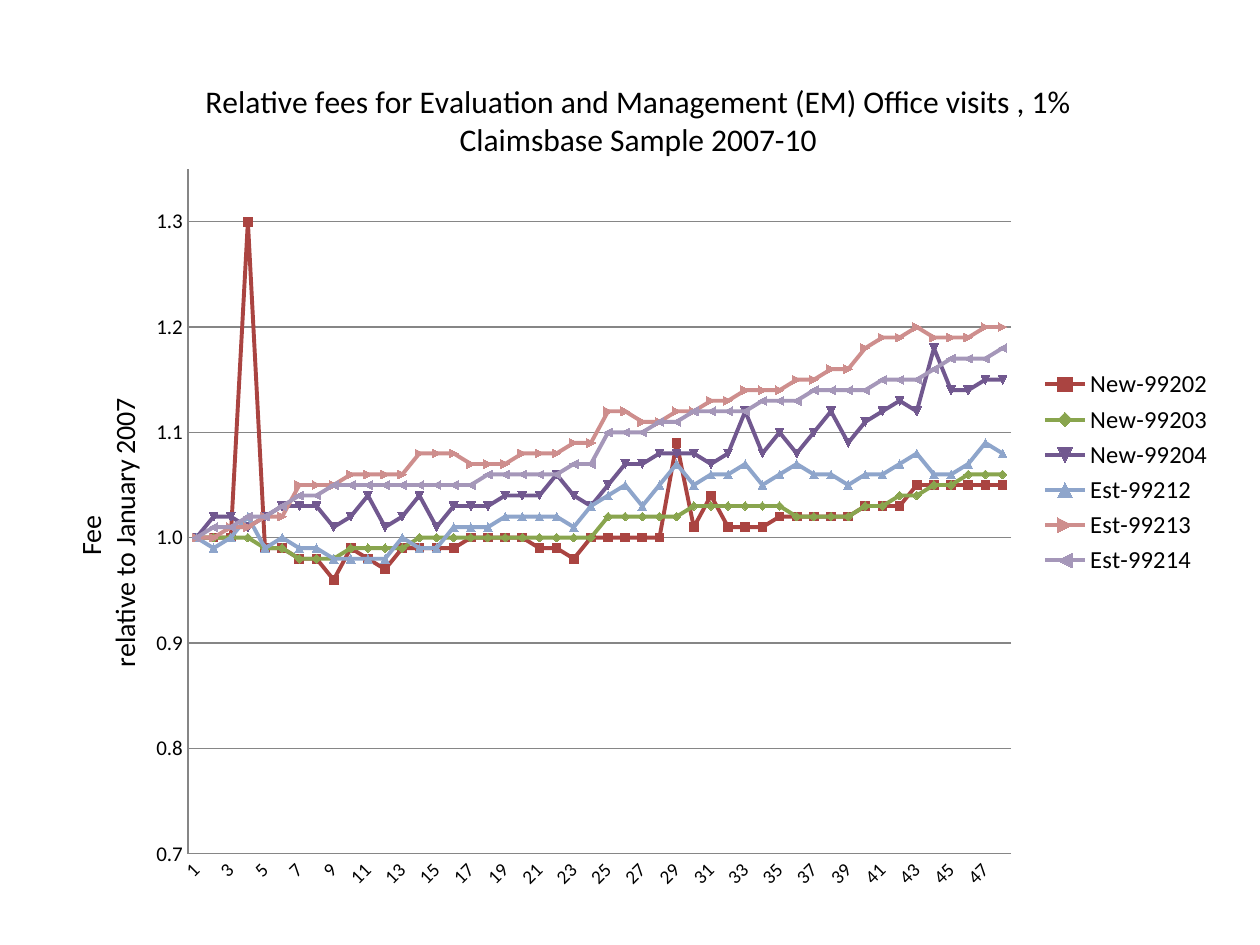
import itertools
import pptx
import pptx.chart.data
import pptx.dml.color
import pptx.enum.chart
import pptx.oxml
import pptx.oxml.ns
import pptx.util
from pptx.util import Inches

RGBColor = pptx.dml.color.RGBColor
BLACK = RGBColor.from_string("000000")
GRAY = RGBColor.from_string("868686")
RED = RGBColor.from_string("AA4441")
GREEN = RGBColor.from_string("89A54E")
PURPLE = RGBColor.from_string("71588F")
BLUE = RGBColor.from_string("8EA5CB")
PINK = RGBColor.from_string("CE8E8D")
LILAC = RGBColor.from_string("A597B9")
FONT = "Calibri"
MONTHS = 48
TITLE = ("Relative fees for Evaluation and Management (EM) Office visits , 1% "
         "Claimsbase Sample 2007-10")

TURNING_MONTHS_BY_FEE = [
    ("New-99202", RED, {
        1: [1, 3, 20, 24, 28], 1.3: [4], 0.99: [5, 10, 13], 0.98: [8, 23],
        0.96: [9], 0.97: [12], 1.09: [29], 1.01: [30, 32], 1.04: [31],
        1.03: [42], 1.05: [43, 48]}),
    ("New-99203", GREEN, {
        1: [1, 4, 16, 24], 0.98: [7], 1.02: [25, 39], 1.03: [33],
        1.05: [44], 1.06: [48]}),
    ("New-99204", PURPLE, {
        1: [1], 1.02: [2], 1.01: [4, 9, 12, 15], 1.03: [6, 8, 16, 24],
        1.04: [11, 14, 21], 1.06: [22], 1.07: [26, 31], 1.08: [29, 32, 34, 36],
        1.12: [33, 38, 43], 1.1: [35], 1.09: [39], 1.11: [40], 1.13: [42],
        1.18: [44], 1.14: [45], 1.15: [48]}),
    ("Est-99212", BLUE, {
        1: [1, 6, 13], 0.99: [2, 5, 15], 1.02: [4, 22], 0.98: [9, 12],
        1.01: [16, 23], 1.03: [24, 27], 1.05: [26, 30, 34, 39],
        1.07: [29, 33, 36, 46], 1.08: [43, 48], 1.06: [44], 1.09: [47]}),
    ("Est-99213", PINK, {
        1: [1], 1.02: [6], 1.05: [7], 1.06: [13], 1.08: [14], 1.07: [18],
        1.09: [24], 1.12: [25], 1.11: [27], 1.16: [39], 1.18: [40],
        1.2: [43, 48], 1.19: [44]}),
    ("Est-99214", LILAC, {
        1: [1], 1.05: [9, 16], 1.07: [24], 1.1: [25, 27], 1.11: [28],
        1.12: [32], 1.15: [42], 1.18: [48]}),
]


def monthly_fees(months_by_fee):
    turns = sorted((month, fee) for fee, months in months_by_fee.items()
                   for month in months)
    fees = [turns[0][1]]
    for (start, low), (end, high) in itertools.pairwise(turns):
        step = (high - low) / (end - start)
        fees += [round(low + step * n, 2) for n in range(1, end - start + 1)]
    return fees


def format_font(font, size, bold=False, color=BLACK):
    font.name = FONT
    font.size = pptx.util.Pt(size)
    font.bold = bold
    font.color.rgb = color


def write_text(tf, text, **fmt):
    tf.text = text
    for p in tf.paragraphs:
        format_font(p.font, **fmt)
        for r in p.runs:
            format_font(r.font, **fmt)


def set_layout(element, inner=False, **places):
    qn = pptx.oxml.ns.qn
    for old in element.findall(qn("c:layout")):
        element.remove(old)
    tags = ['<c:layoutTarget val="inner"/>'] if inner else []
    tags += [f'<c:{k}Mode val="edge"/>' for k in ("x", "y")]
    tags += [f'<c:{k} val="{v}"/>' for k, v in places.items()]
    layout = pptx.oxml.parse_xml(
        f'<c:layout {pptx.oxml.ns.nsdecls("c")}><c:manualLayout>'
        f'{"".join(tags)}</c:manualLayout></c:layout>')
    tx = element.find(qn("c:tx"))
    element.insert(0 if tx is None else element.index(tx) + 1, layout)


def style_line(line, color, width):
    line.color.rgb = color
    line.width = pptx.util.Pt(width)


def style_axis(axis, size):
    axis.major_tick_mark = pptx.enum.chart.XL_TICK_MARK.NONE
    axis.minor_tick_mark = pptx.enum.chart.XL_TICK_MARK.NONE
    style_line(axis.format.line, GRAY, 0.75)
    format_font(axis.tick_labels.font, size)


def style_category_axis(axis):
    style_axis(axis, 11)
    axis.has_major_gridlines = False
    axis._element.txPr.bodyPr.set("rot", "-2700000")
    skip = pptx.oxml.parse_xml(
        f'<c:tickLblSkip {pptx.oxml.ns.nsdecls("c")} val="2"/>')
    axis._element.find(pptx.oxml.ns.qn("c:noMultiLvlLbl")).addprevious(skip)


def style_value_axis(axis):
    style_axis(axis, 12)
    axis.minimum_scale, axis.maximum_scale, axis.major_unit = 0.7, 1.35, 0.1
    axis.tick_labels.number_format = "0.0"
    axis.tick_labels.number_format_is_linked = False
    axis.has_major_gridlines = True
    style_line(axis.major_gridlines.format.line, GRAY, 0.75)
    write_text(axis.axis_title.text_frame, "Fee \nrelative to January 2007", size=16)
    set_layout(axis.axis_title._element, x=0.03, y=0.41)


def add_legend(chart):
    chart.has_legend = True
    chart.legend.position = pptx.enum.chart.XL_LEGEND_POSITION.RIGHT
    chart.legend.include_in_layout = False
    format_font(chart.legend.font, 14)


def add_fee_chart(slide):
    data = pptx.chart.data.CategoryChartData(number_format="0.00")
    data.categories = [str(month) for month in range(1, MONTHS + 1)]
    for name, _, months_by_fee in TURNING_MONTHS_BY_FEE:
        data.add_series(name, monthly_fees(months_by_fee))
    chart = slide.shapes.add_chart(
        pptx.enum.chart.XL_CHART_TYPE.LINE_MARKERS, Inches(0.26), Inches(0.31),
        Inches(9.47), Inches(6.88), data).chart
    format_font(chart.font, 10)
    chart.has_title = True
    write_text(chart.chart_title.text_frame, TITLE, size=18)
    set_layout(chart.chart_title._element, x=0.14, y=0.04)
    plot = chart.plots[0]
    plot.vary_by_categories = False
    for series, (_, color, _) in zip(plot.series, TURNING_MONTHS_BY_FEE):
        series.smooth = False
        style_line(series.format.line, color, 2.25)
    style_category_axis(chart.category_axis)
    style_value_axis(chart.value_axis)
    add_legend(chart)
    set_layout(chart._chartSpace.chart.plotArea, inner=True,
               x=0.13, y=0.15, w=0.69, h=0.79)


def main():
    prs = pptx.Presentation()
    prs.slide_width, prs.slide_height = Inches(10), Inches(7.5)
    slide = prs.slides.add_slide(prs.slide_layouts[6])
    add_fee_chart(slide)
    prs.save("out.pptx")


if __name__ == "__main__":
    main()
